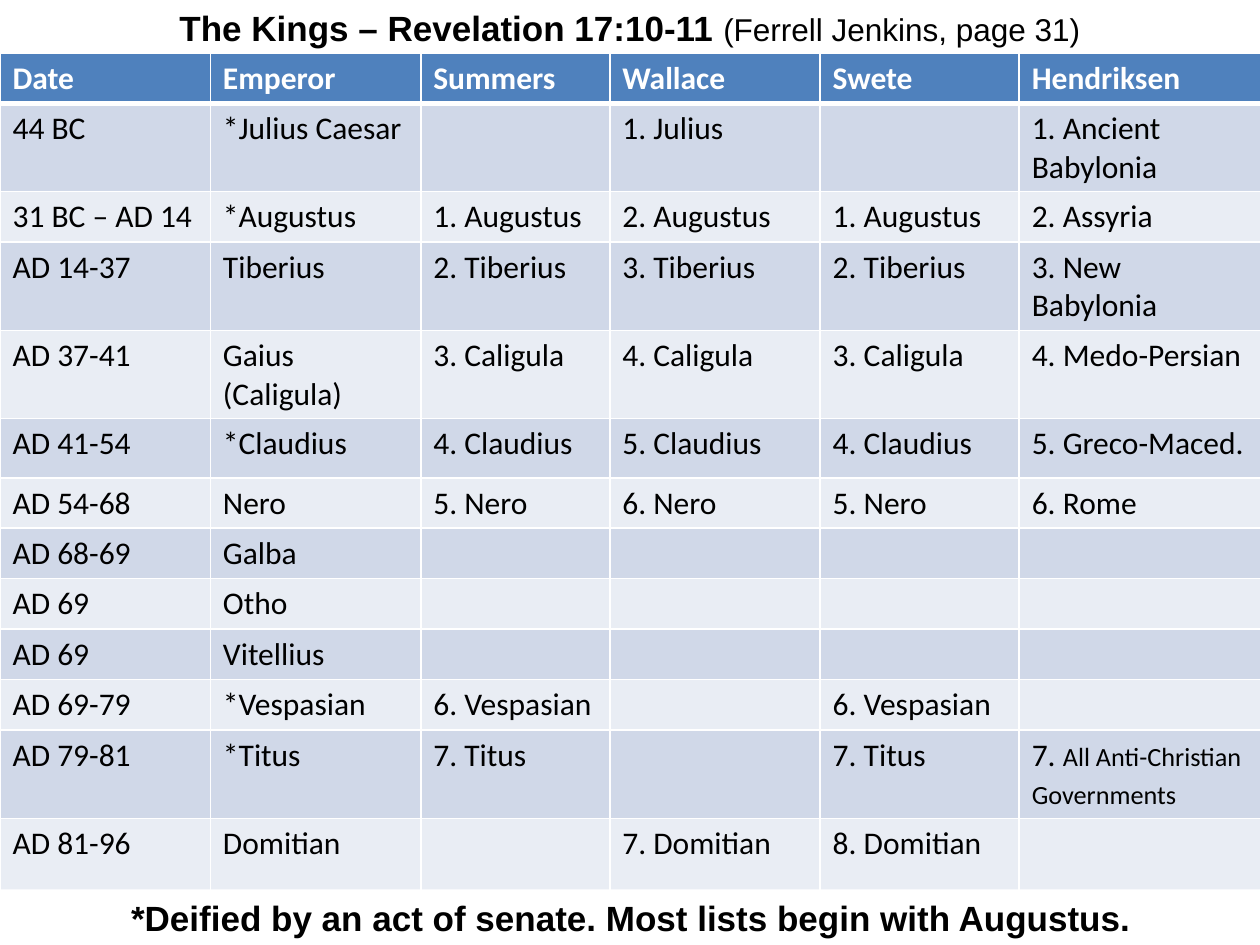
from pptx import Presentation
from pptx import util as u
from pptx.dml import color
from pptx.enum import shapes, text
from pptx.oxml import ns
from lxml import etree

COLORS = {
    "white": "FFFFFF",
    "black": "000000",
    "header": "4F81BD",
    "odd": "D0D8E8",
    "even": "E9EDF4",
}
TITLE = [("The Kings – Revelation 17:10-11 ", 20, True),
         ("(Ferrell Jenkins, page 31)", 18, False)]
FOOTNOTE = [("*Deified by an act of senate. Most lists begin with Augustus.", 20, True)]
ANTI_CHRISTIAN = [("7. ", 18), ("All Anti-Christian Governments", 15), (" ", 18)]

COLUMNS = [("Date", 1.67), ("Emperor", 1.67), ("Summers", 1.5),
           ("Wallace", 1.67), ("Swete", 1.58), ("Hendriksen", 1.92)]
HEADER_HEIGHT = 0.38
REIGNS = [
    (0.62, "44 BC", "*Julius Caesar", "", "1. Julius", "", "1. Ancient Babylonia"),
    (0.38, "31 BC – AD 14", "*Augustus", "1. Augustus", "2. Augustus", "1. Augustus", "2. Assyria"),
    (0.47, "AD 14-37", "Tiberius", "2. Tiberius", "3. Tiberius", "2. Tiberius", "3. New Babylonia"),
    (0.67, "AD 37-41", "Gaius (Caligula)", "3. Caligula", "4. Caligula", "3. Caligula", "4. Medo-Persian"),
    (0.47, "AD 41-54", "*Claudius", "4. Claudius", "5. Claudius", "4. Claudius", "5. Greco-Maced."),
    (0.39, "AD 54-68", "Nero", "5. Nero", "6. Nero", "5. Nero", "6. Rome"),
    (0.38, "AD 68-69", "Galba", "", "", "", ""),
    (0.38, "AD 69", "Otho", "", "", "", ""),
    (0.38, "AD 69", "Vitellius", "", "", "", ""),
    (0.38, "AD 69-79", "*Vespasian", "6. Vespasian", "", "6. Vespasian", ""),
    (0.67, "AD 79-81", "*Titus", "7. Titus", "", "7. Titus", ANTI_CHRISTIAN),
    (0.67, "AD 81-96", "Domitian", "", "7. Domitian", "8. Domitian", ""),
]
WIDTH, HEIGHT = 10, 7.5
BAND_HEIGHT = 0.44
TABLE_TOP = 0.42


def rgb(name):
    return color.RGBColor.from_string(COLORS[name])


def add_span(para, words, font, size, bold, tint):
    span = para.add_run()
    span.text = words
    span.font.name = font
    span.font.size = u.Pt(size)
    span.font.bold = bold
    span.font.color.rgb = rgb(tint)


def add_band(page, left, top, spans):
    box = page.shapes.add_shape(
        shapes.MSO_SHAPE.RECTANGLE, u.Inches(left), u.Inches(top),
        u.Inches(WIDTH), u.Inches(BAND_HEIGHT))
    box.shadow.inherit = False
    box.fill.solid()
    box.fill.fore_color.rgb = rgb("white")
    box.line.fill.background()
    box.text_frame.word_wrap = True
    box.text_frame.auto_size = text.MSO_AUTO_SIZE.SHAPE_TO_FIT_TEXT
    para = box.text_frame.paragraphs[0]
    para.alignment = text.PP_ALIGN.CENTER
    for words, size, bold in spans:
        add_span(para, words, "Arial", size, bold, "black")


def add_borders(cell, bottom):
    properties = cell._tc.get_or_add_tcPr()
    for side, points in (("L", 1), ("R", 1), ("T", 1), ("B", bottom)):
        line = etree.SubElement(properties, ns.qn(f"a:ln{side}"), w=str(u.Pt(points)))
        fill = etree.SubElement(line, ns.qn("a:solidFill"))
        etree.SubElement(fill, ns.qn("a:srgbClr"), val=COLORS["white"])


def fill_cell(cell, content, header, band):
    add_borders(cell, 3 if header else 1)
    cell.fill.solid()
    cell.fill.fore_color.rgb = rgb(band)
    spans = [(content, 18)] if isinstance(content, str) else content
    for words, size in spans:
        if words:
            add_span(cell.text_frame.paragraphs[0], words, "Calibri", size,
                     header, "white" if header else "black")


def add_kings_table(page):
    rows = [(HEADER_HEIGHT, *(name for name, width in COLUMNS)), *REIGNS]
    total = sum(row[0] for row in rows)
    table = page.shapes.add_table(
        len(rows), len(COLUMNS), 0, u.Inches(TABLE_TOP),
        u.Inches(WIDTH), u.Inches(total)).table
    for column, (name, width) in zip(table.columns, COLUMNS):
        column.width = u.Inches(width)
    for index, (height, *contents) in enumerate(rows):
        table.rows[index].height = u.Inches(height)
        header = index == 0
        band = "header" if header else ("even", "odd")[index % 2]
        for column, content in enumerate(contents):
            fill_cell(table.cell(index, column), content, header, band)


def main():
    deck = Presentation()
    deck.slide_width, deck.slide_height = u.Inches(WIDTH), u.Inches(HEIGHT)
    page = deck.slides.add_slide(deck.slide_layouts[6])
    add_band(page, 0, 0, TITLE)
    add_kings_table(page)
    add_band(page, 0.01, HEIGHT - BAND_HEIGHT, FOOTNOTE)
    deck.save("out.pptx")


if __name__ == "__main__":
    main()
